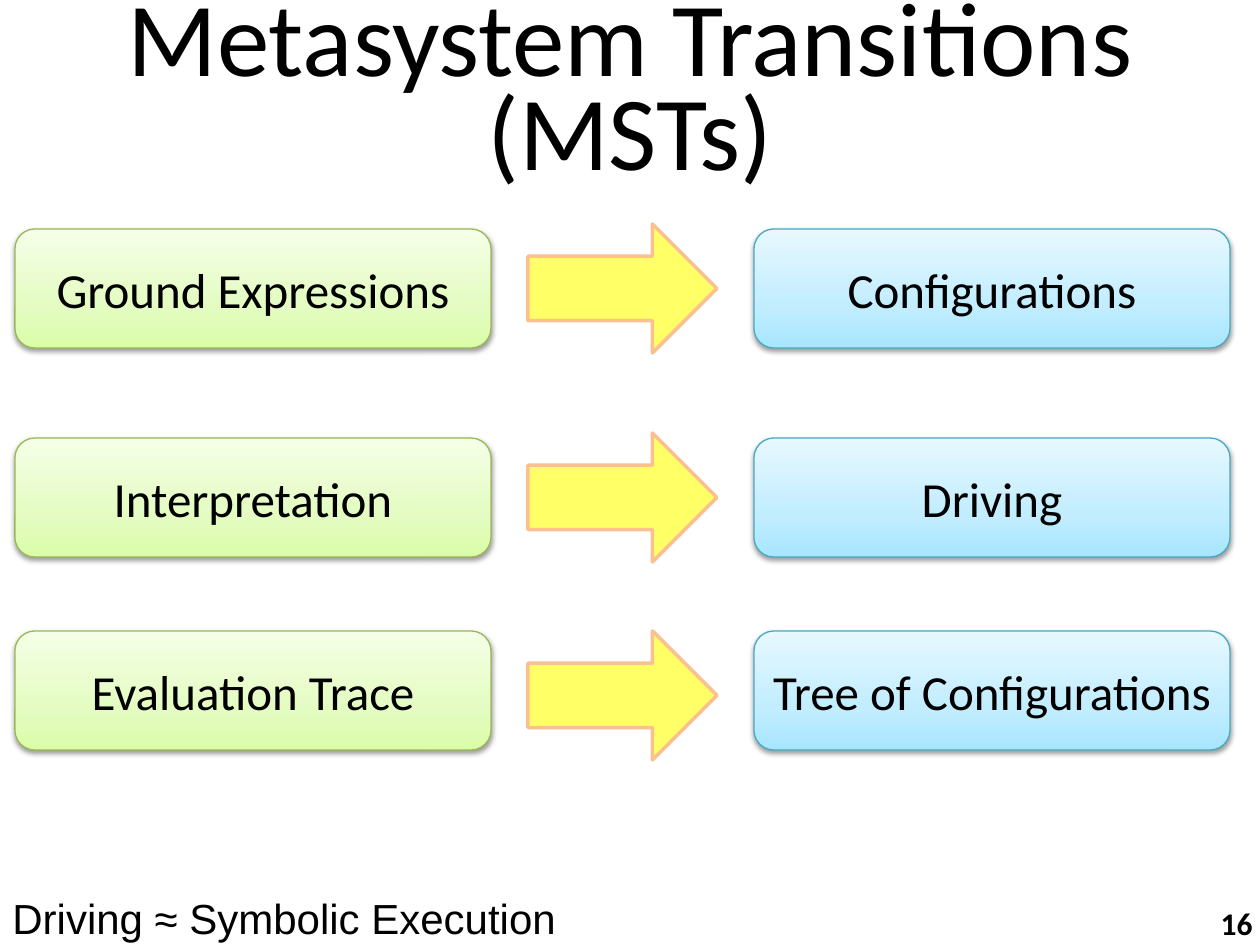
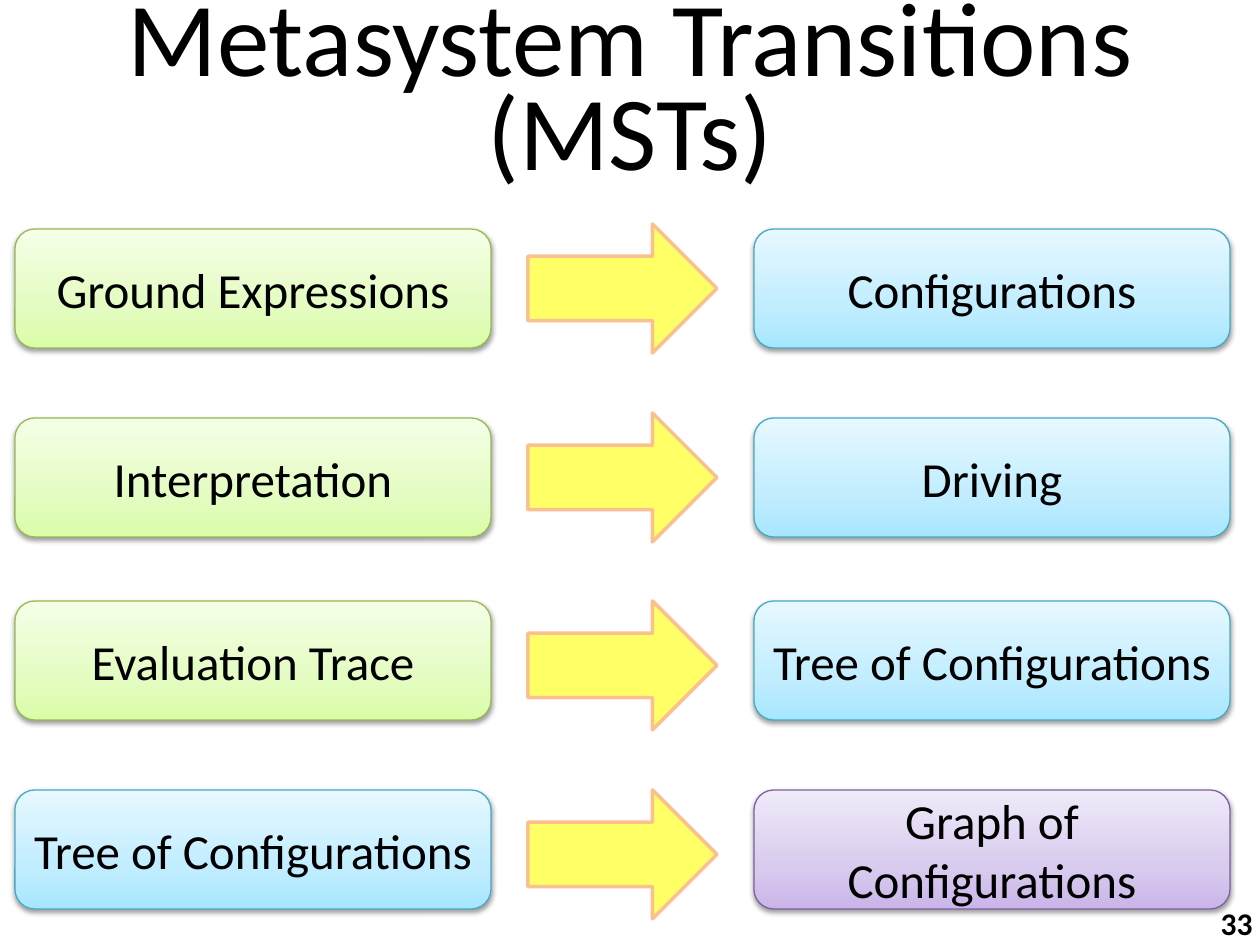
from dataclasses import dataclass

from lxml import etree
from pptx import Presentation
from pptx import util as u
from pptx.dml.color import RGBColor
from pptx.enum import shapes, text
from pptx.oxml import ns

PX_PER_INCH = 126


@dataclass(frozen=True)
class Finish:
    """Gradient stops, from bottom to top, and outline of a concept box."""
    stops: tuple
    line: str


@dataclass(frozen=True)
class Theme:
    """Colours, fonts and type sizes shared by the slides."""
    ink: str = "000000"
    font: str = "Calibri"
    note_font: str = "Arial"
    title_size: int = 60
    box_size: int = 28
    note_size: int = 24
    number_size: int = 18
    arrow_fill: str = "FFFF66"
    arrow_line: str = "FAC090"
    green: Finish = Finish(("DAFDA7", "E4FCC2", "F5FFE7"), "98B955")
    blue: Finish = Finish(("A7E6FF", "C1EDFF", "E7F8FF"), "46AAC5")
    purple: Finish = Finish(("C9B5E8", "D8CBEE", "F0EAF9"), "7D60A0")


THEME = Theme()
STOP_POSITIONS = (0, 35000, 100000)

TITLE = "Metasystem Transitions (MSTs)"
TITLE_BOX = (63, -4, 1134, 198)
NUMBER_BOX = (971, 898, 294, 50)
NOTE_BOX = (0, 886, 1121, 63)
ROW_LEFT, ROW_WIDTH, ROW_HEIGHT = 15, 1215, 129
BOX_WIDTH, BOX_HEIGHT = 476, 119
ARROW_OFFSET, ARROW_WIDTH = 513, 189

BASIC_TRANSITIONS = (
    ("Ground Expressions", THEME.green, "Configurations", THEME.blue),
    ("Interpretation", THEME.green, "Driving", THEME.blue),
    ("Evaluation Trace", THEME.green, "Tree of Configurations", THEME.blue),
)
GRAPH_TRANSITION = ("Tree of Configurations", THEME.blue,
                    "Graph of Configurations", THEME.purple)


def px(length):
    """Turn pixels into EMU."""
    return u.Inches(length / PX_PER_INCH)


def emu_box(box):
    """Turn a pixel box into EMU."""
    return [px(length) for length in box]


def write_text(shape, words, size, font=THEME.font, bold=None, spacing=None,
               align=text.PP_ALIGN.CENTER, anchor=text.MSO_ANCHOR.MIDDLE):
    """Write one formatted paragraph into a shape."""
    frame = shape.text_frame
    frame.word_wrap = True
    frame.vertical_anchor = anchor
    paragraph = frame.paragraphs[0]
    paragraph.alignment = align
    paragraph.line_spacing = spacing
    run = paragraph.add_run()
    run.text = words
    run.font.size = u.Pt(size)
    run.font.name = font
    run.font.bold = bold
    run.font.color.rgb = RGBColor.from_string(THEME.ink)


def add_label(slide, box, words, size, **formatting):
    """Add a text box."""
    write_text(slide.shapes.add_textbox(*emu_box(box)), words, size, **formatting)


def add_outlined(parent, kind, box, line, width):
    """Add an outlined preset shape without a shadow."""
    shape = parent.shapes.add_shape(kind, *emu_box(box))
    shape.shadow.inherit = False
    shape.line.color.rgb = RGBColor.from_string(line)
    shape.line.width = u.Pt(width)
    return shape


def add_child(parent, tag, **attributes):
    """Append a drawing element with the given attributes."""
    return etree.SubElement(parent, ns.qn(tag),
                            {name: str(value) for name, value in attributes.items()})


def set_gradient(shape, colours):
    """Fill a shape with a vertical gradient running upwards."""
    shape.fill.gradient()
    shape.fill.gradient_angle = 90
    stops = shape.element.spPr.find(".//" + ns.qn("a:gsLst"))
    for stop in list(stops):
        stops.remove(stop)
    for position, colour in zip(STOP_POSITIONS, colours):
        add_child(add_child(stops, "a:gs", pos=position), "a:srgbClr", val=colour)


def set_shadow(shape):
    """Cast a soft shadow below a shape."""
    effects = shape.element.spPr.find(ns.qn("a:effectLst"))
    shadow = add_child(effects, "a:outerShdw", blurRad=u.Pt(3.1), dist=u.Pt(1.6),
                       dir=5400000, rotWithShape=0)
    add_child(add_child(shadow, "a:srgbClr", val=THEME.ink), "a:alpha", val=38000)


def add_concept(parent, box, words, finish):
    """Add a shaded rounded box that names a concept."""
    shape = add_outlined(parent, shapes.MSO_SHAPE.ROUNDED_RECTANGLE, box,
                         finish.line, 0.75)
    set_gradient(shape, finish.stops)
    set_shadow(shape)
    write_text(shape, words, THEME.box_size)


def add_transition(slide, box, transition, inset):
    """Add a source concept, an arrow and a target concept as one group."""
    left, top, width, height = box
    source, source_finish, target, target_finish = transition
    group = slide.shapes.add_group_shape()
    add_concept(group, (left, top + inset, BOX_WIDTH, BOX_HEIGHT),
                source, source_finish)
    arrow = add_outlined(group, shapes.MSO_SHAPE.RIGHT_ARROW,
                         (left + ARROW_OFFSET, top, ARROW_WIDTH, height),
                         THEME.arrow_line, 2)
    arrow.fill.solid()
    arrow.fill.fore_color.rgb = RGBColor.from_string(THEME.arrow_fill)
    add_concept(group, (left + width - BOX_WIDTH, top + inset, BOX_WIDTH, BOX_HEIGHT),
                target, target_finish)


def add_transition_slide(presentation, number, transitions, tops, note=None):
    """Add a titled slide with one row for each transition."""
    slide = presentation.slides.add_slide(presentation.slide_layouts[6])
    add_label(slide, TITLE_BOX, TITLE, THEME.title_size, spacing=0.75)
    for index, (transition, top) in enumerate(zip(transitions, tops)):
        add_transition(slide, (ROW_LEFT, top, ROW_WIDTH, ROW_HEIGHT), transition,
                       inset=5 if index < 2 else 0)
    add_label(slide, NUMBER_BOX, str(number), THEME.number_size, bold=True,
              align=text.PP_ALIGN.RIGHT)
    if note:
        add_label(slide, NOTE_BOX, note, THEME.note_size, font=THEME.note_font,
                  align=text.PP_ALIGN.LEFT, anchor=text.MSO_ANCHOR.TOP)


def main():
    """Build and save the presentation."""
    presentation = Presentation()
    presentation.slide_width, presentation.slide_height = px(1260), px(945)
    add_transition_slide(presentation, 16, BASIC_TRANSITIONS, (224, 433, 631),
                         note="Driving ≈ Symbolic Execution")
    add_transition_slide(presentation, 33, BASIC_TRANSITIONS + (GRAPH_TRANSITION,),
                         (224, 413, 601, 790))
    presentation.save("out.pptx")


if __name__ == "__main__":
    main()
